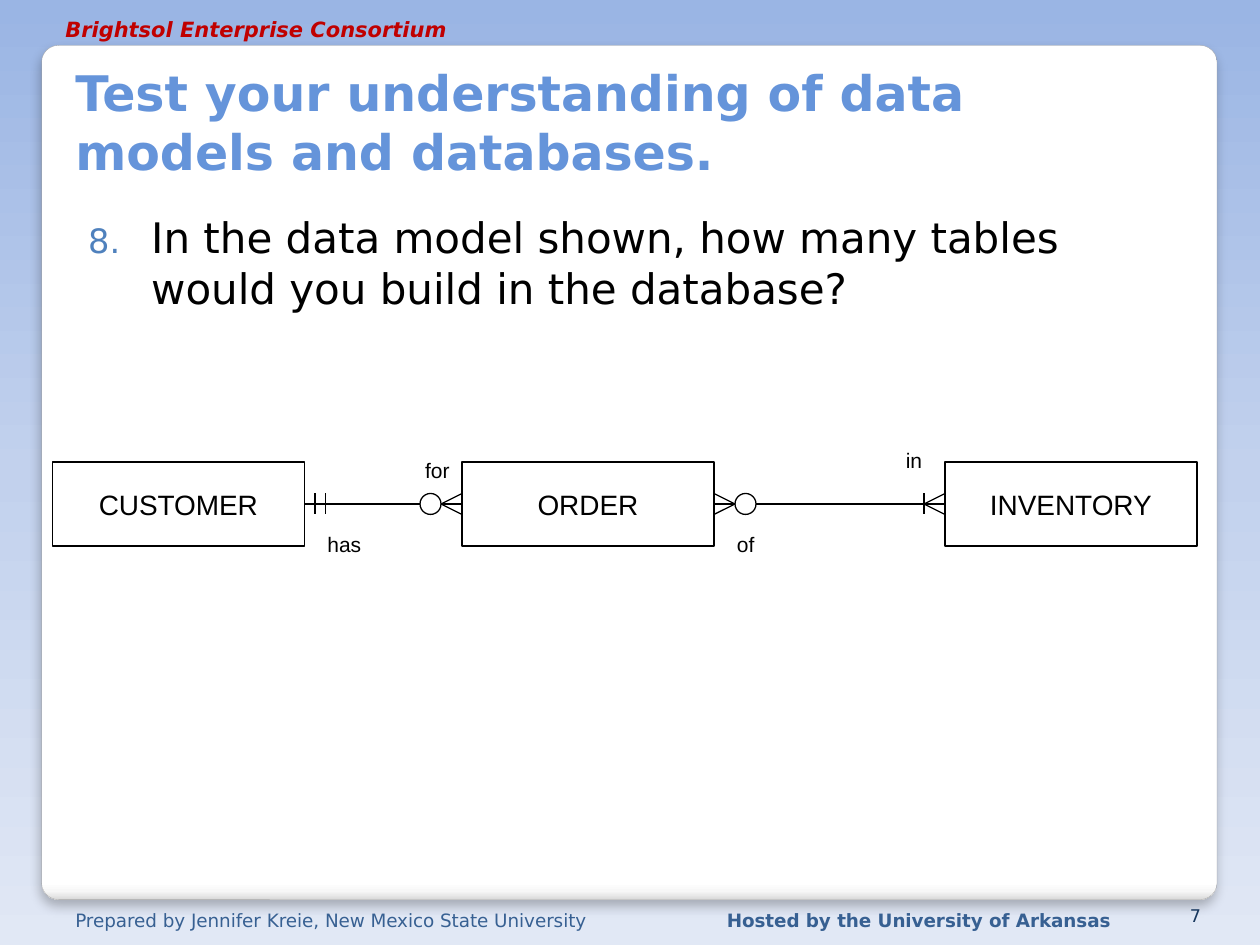
from lxml import etree
from pptx import Presentation
from pptx.dml.color import RGBColor
from pptx.enum.shapes import MSO_CONNECTOR, MSO_SHAPE
from pptx.enum.text import MSO_ANCHOR, MSO_AUTO_SIZE, PP_ALIGN
from pptx.oxml.ns import qn
from pptx.util import Inches, Pt

RECT, OVAL, ROUNDED = MSO_SHAPE.RECTANGLE, MSO_SHAPE.OVAL, MSO_SHAPE.ROUNDED_RECTANGLE
STRAIGHT = MSO_CONNECTOR.STRAIGHT
LEFT, CENTER, RIGHT = PP_ALIGN.LEFT, PP_ALIGN.CENTER, PP_ALIGN.RIGHT
TOP, MIDDLE, BOTTOM = MSO_ANCHOR.TOP, MSO_ANCHOR.MIDDLE, MSO_ANCHOR.BOTTOM
GROW = MSO_AUTO_SIZE.SHAPE_TO_FIT_TEXT
SANS, ARIAL = "DejaVu Sans", "Arial"
BLACK, FOOTER_BLUE = "000000", "376092"
CELL = 1 / 12
AXIS = 48
ENTITY_WIDTH, ENTITY_HEIGHT = 24, 8
ENTITIES = {"CUSTOMER": 5, "ORDER": 44, "INVENTORY": 90}
LABELS = [("has", 30, 50, LEFT), ("for", 36, 43, RIGHT),
          ("of", 69, 50, LEFT), ("in", 81, 42, RIGHT)]


def rgb(value):
    """Turn a hex string into a colour."""
    return RGBColor.from_string(value)


def grid(*cells):
    """Turn diagram grid cells into lengths."""
    return [Inches(cell * CELL) for cell in cells]


def add_child(parent, tag, **attributes):
    """Append a DrawingML element with the given attributes."""
    child = etree.SubElement(parent, qn(tag))
    for name, value in attributes.items():
        child.set(name, str(value))
    return child


def set_gradient(properties, stops):
    """Replace a solid fill by a gradient running from top to bottom."""
    gradient = etree.Element(qn("a:gradFill"), rotWithShape="1")
    stop_list = add_child(gradient, "a:gsLst")
    for percent, color in stops:
        stop = add_child(stop_list, "a:gs", pos=percent * 1000)
        add_child(stop, "a:srgbClr", val=color)
    add_child(gradient, "a:lin", ang=5400000, scaled=0)
    properties.replace(properties.find(qn("a:solidFill")), gradient)


def add_span(para, text, size, color, font=SANS, bold=False, italic=False):
    """Add one formatted run to a paragraph."""
    span = para.add_run()
    span.text = text
    span.font.name, span.font.size = font, Pt(size)
    span.font.bold, span.font.italic = bold, italic
    span.font.color.rgb = rgb(color)


def add_text(shapes, area, text, size, color, align=LEFT, anchor=TOP, **style):
    """Add a wrapping text box with one paragraph."""
    box = shapes.add_textbox(*area)
    box.text_frame.word_wrap = True
    box.text_frame.vertical_anchor = anchor
    para = box.text_frame.paragraphs[0]
    para.alignment = align
    add_span(para, text, size, color, **style)
    return box


def add_outline(shapes, kind, area, color=BLACK, width=0.75):
    """Add an unfilled preset shape with a thin outline."""
    shape = shapes.add_shape(kind, *area)
    shape.shadow.inherit = False
    shape.fill.background()
    shape.line.color.rgb, shape.line.width = rgb(color), Pt(width)
    return shape


def add_line(shapes, x1, y1, x2, y2):
    """Draw a thin line between two grid points."""
    line = shapes.add_connector(STRAIGHT, *grid(x1, y1, x2, y2))
    line.line.color.rgb, line.line.width = rgb(BLACK), Pt(0.75)
    add_child(line.element.spPr, "a:effectLst")


def add_bar(shapes, x):
    """Mark a cardinality of one across the relationship axis."""
    add_line(shapes, x, AXIS - 1, x, AXIS + 1)


def add_crow_foot(shapes, tip, edge):
    """Spread three lines from a tip to an entity's edge."""
    for offset in (0, 1, -1):
        add_line(shapes, tip, AXIS, edge, AXIS + offset)


def add_entity(shapes, name, left):
    """Add a named entity box centred on the axis."""
    area = grid(left, AXIS - ENTITY_HEIGHT / 2, ENTITY_WIDTH, ENTITY_HEIGHT)
    frame = add_outline(shapes, RECT, area).text_frame
    frame.word_wrap, frame.vertical_anchor = False, MIDDLE
    frame.paragraphs[0].alignment = CENTER
    add_span(frame.paragraphs[0], name, 16, BLACK, ARIAL)


def add_diagram(page):
    """Group the entities, their relationships and the role labels."""
    shapes = page.shapes.add_group_shape().shapes
    for name, left in ENTITIES.items():
        add_entity(shapes, name, left)
    customer, order, inventory = ENTITIES.values()
    customer_edge, order_edge = customer + ENTITY_WIDTH, order + ENTITY_WIDTH
    add_line(shapes, customer_edge, AXIS, order - 4, AXIS)
    add_line(shapes, order_edge + 4, AXIS, inventory - 2, AXIS)
    for x in (customer_edge + 1, customer_edge + 2, inventory - 2):
        add_bar(shapes, x)
    for left in (order - 4, order_edge + 2):
        add_outline(shapes, OVAL, grid(left, AXIS - 1, 2, 2))
    for tip, edge in ((order - 2, order), (order_edge + 2, order_edge),
                      (inventory - 2, inventory)):
        add_crow_foot(shapes, tip, edge)
    for text, left, top, align in LABELS:
        label = add_text(shapes, grid(left, top, 8, 3.6), text, 12, BLACK,
                         align, font=ARIAL)
        label.text_frame.auto_size = GROW


def add_backdrop(page):
    """Add the shaded background and the white panel."""
    page.background.fill.solid()
    set_gradient(page.element.find(".//" + qn("p:bgPr")),
                 [(0, "9AB5E4"), (50, "C2D1ED"), (100, "E1E8F5")])
    area = map(Inches, (0.33, 0.36, 9.33, 6.78))
    panel = add_outline(page.shapes, ROUNDED, area, "A4A4A4", 0.16)
    panel.adjustments[0] = 0.02
    panel.fill.solid()
    properties = panel.element.spPr
    set_gradient(properties, [(0, "FFFFFF"), (98, "FFFFFF"),
                              (99, "F7F7F7"), (100, "DADADA")])
    shadow = add_child(properties.find(qn("a:effectLst")), "a:outerShdw",
                       blurRad=Pt(6), dist=Pt(4), dir=5400000, rotWithShape=0)
    add_child(add_child(shadow, "a:srgbClr", val=BLACK), "a:alpha", val=25000)


def add_question(page, number, text):
    """Add the numbered question with a hanging indent."""
    area = map(Inches, (0.5, 1.58, 8.92, 3.58))
    box = add_text(page.shapes, area, text, 24, BLACK)
    frame = box.text_frame
    frame.margin_left, frame.margin_top = Inches(0.2), Inches(0.1)
    para = frame.paragraphs[0]
    para.space_before = Pt(2.5)
    properties = para._p.get_or_add_pPr()
    properties.set("marL", str(Inches(0.5)))
    properties.set("indent", str(-Inches(0.5)))
    add_child(add_child(properties, "a:buClr"), "a:srgbClr", val="4F81BD")
    add_child(properties, "a:buSzPct", val=80000)
    add_child(properties, "a:buFont", typeface=SANS)
    add_child(properties, "a:buAutoNum", type="arabicPeriod", startAt=number)


def add_margin_texts(page):
    """Add the header, both footers and the page number."""
    def place(left, top, width, *args, **style):
        area = map(Inches, (left, top, width, 0.23))
        add_text(page.shapes, area, *args, **style)

    place(0.5, 7.17, 4.46, "Prepared by Jennifer Kreie, New Mexico State University",
          10.5, FOOTER_BLUE)
    place(5.67, 7.17, 3.33, "Hosted by the University of Arkansas",
          10.5, FOOTER_BLUE, bold=True)
    place(0.42, 0.08, 3.33, "Brightsol Enterprise Consortium",
          12, "C00000", bold=True, italic=True)
    place(9.13, 7.17, 0.5, "7", 10, "17375E", RIGHT, BOTTOM)


def main():
    """Build and save the slide."""
    deck = Presentation()
    deck.slide_width, deck.slide_height = Inches(10), Inches(7.5)
    page = deck.slides.add_slide(deck.slide_layouts[6])
    add_backdrop(page)
    add_margin_texts(page)
    add_text(page.shapes, map(Inches, (0.5, 0.33, 8.95, 1.15)),
             "Test your understanding of data models and databases.",
             28, "6594DA", anchor=BOTTOM, bold=True)
    add_question(page, 8, "In the data model shown, how many tables "
                          "would you build in the database?")
    add_diagram(page)
    deck.save("out.pptx")


if __name__ == "__main__":
    main()
